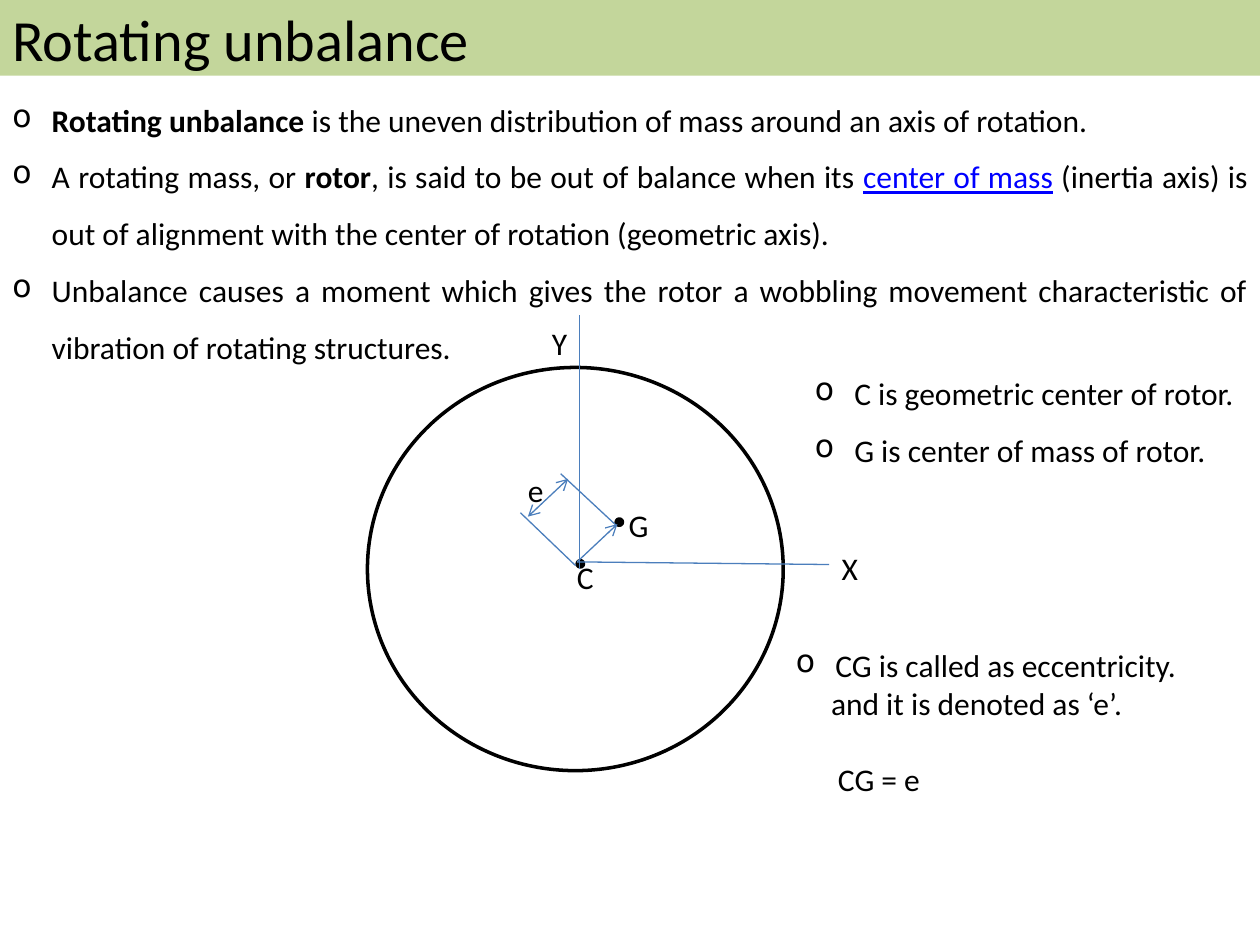
from lxml import etree
from pptx import Presentation
from pptx.dml.color import RGBColor
from pptx.enum import shapes, text
from pptx.oxml.ns import qn
from pptx.util import Pt

COLORS = {"band": "C3D69B", "ink": "000000", "link": "0000FF", "axis": "4B7EBC"}
BODY = {"name": "Calibri", "size": Pt(18)}
TITLE = {"name": "Calibri", "size": Pt(33.3)}
BOLD = {"bold": True}
LINK = {"underline": True}
HANG = 22.5
JUSTIFIED = {"alignment": text.PP_ALIGN.JUSTIFY, "line_spacing": 1.5}
DOT = 3.6


def color(key):
    return RGBColor.from_string(COLORS[key])


def apply_format(target, values):
    for attribute, value in values.items():
        setattr(target, attribute, value)


def add_bullet(paragraph):
    properties = paragraph._p.get_or_add_pPr()
    properties.set("marL", str(Pt(HANG)))
    properties.set("indent", str(-Pt(HANG)))
    etree.SubElement(properties, qn("a:buChar")).set("char", "o")


def indent(paragraph, points):
    paragraph._p.get_or_add_pPr().set("marL", str(Pt(points)))


def write_runs(paragraph, runs, font=BODY):
    for wording, emphasis in runs:
        run = paragraph.add_run()
        run.text = wording
        apply_format(run.font, {**font, **emphasis})
        run.font.color.rgb = color("link" if emphasis is LINK else "ink")


def add_text(slide, box, paragraphs, margins={}):
    frame = slide.shapes.add_textbox(*map(Pt, box)).text_frame
    apply_format(frame, {"word_wrap": True, **margins})
    for number, (runs, layout, left) in enumerate(paragraphs):
        paragraph = frame.add_paragraph() if number else frame.paragraphs[0]
        apply_format(paragraph, layout)
        if left is None:
            add_bullet(paragraph)
        elif left:
            indent(paragraph, left)
        write_runs(paragraph, runs)


def add_label(slide, letter, box, margins={}):
    add_text(slide, box, [([(letter, {})], {}, 0)], margins)


def add_title(slide, wording):
    band = slide.shapes.add_shape(shapes.MSO_SHAPE.RECTANGLE, 0, 0, Pt(720), Pt(43.2))
    band.shadow.inherit = False
    band.fill.solid()
    band.fill.fore_color.rgb = color("band")
    band.line.fill.background()
    frame = band.text_frame
    frame.vertical_anchor = text.MSO_ANCHOR.MIDDLE
    frame.paragraphs[0].alignment = text.PP_ALIGN.LEFT
    write_runs(frame.paragraphs[0], [(wording, {})], TITLE)


def add_circle(slide, box, filled=False):
    circle = slide.shapes.add_shape(shapes.MSO_SHAPE.OVAL, *map(Pt, box))
    circle.shadow.inherit = False
    if filled:
        circle.fill.solid()
        circle.fill.fore_color.rgb = color("ink")
    else:
        circle.fill.background()
    circle.line.color.rgb = color("ink")
    circle.line.width = Pt(2)


def add_line(slide, start, end, arrows=()):
    line = slide.shapes.add_connector(
        shapes.MSO_CONNECTOR.STRAIGHT, *map(Pt, (*start, *end)))
    line.line.color.rgb = color("axis")
    line.line.width = Pt(0.75)
    for arrow in arrows:
        etree.SubElement(line.line._get_or_add_ln(), qn(arrow)).set("type", "arrow")
    etree.SubElement(line._element.spPr, qn("a:effectLst"))


def add_definitions(slide):
    add_text(slide, (0, 43.2, 720, 167), [
        ([("Rotating unbalance", BOLD),
          (" is the uneven distribution of mass around an axis of rotation.", {})],
         JUSTIFIED, None),
        ([("A rotating mass, or ", {}), ("rotor", BOLD),
          (", is said to be out of balance when its ", {}), ("center of mass", LINK),
          (" (inertia axis) is out of alignment with the center of rotation "
           "(geometric axis).", {})], JUSTIFIED, None),
        ([("Unbalance causes a moment which gives the rotor a wobbling movement "
           "characteristic of vibration of rotating structures.", {})], JUSTIFIED, None),
    ])


def add_rotor(slide):
    add_circle(slide, (210, 210, 237.6, 230.4))
    for left, top in ((329.8, 320.4), (352.1, 296.6)):
        add_circle(slide, (left, top, DOT, DOT), filled=True)

    center = (329.8, 321.1)
    add_line(slide, center, (352.8, 299.5), ["a:tailEnd"])
    add_line(slide, center, (473.8, 322.6))
    add_line(slide, (331.2, 325.4), (331.2, 180))
    add_line(slide, (352.1, 300.2), (320.4, 270.7))
    add_line(slide, (329, 323.3), (297.4, 293))
    add_line(slide, (301.7, 295.2), (324.7, 273.6), ["a:headEnd", "a:tailEnd"])

    add_label(slide, "C", (325.4, 315.4, 12.2, 29),
              {"margin_left": Pt(4.3), "margin_right": 0})
    for letter, left, top in (("G", 352.1, 285.8), ("Y", 308.2, 181.4),
                              ("X", 473.8, 310.3), ("e", 294.5, 265.7)):
        add_label(slide, letter, (left, top, 24, 29))


def add_notation(slide):
    add_text(slide, (458.6, 210.2, 256.3, 62), [
        ([("C is geometric center of rotor.", {})], {}, None),
        ([("G is center of mass of rotor.", {})], {"line_spacing": 1.5}, None),
    ])
    add_text(slide, (447.8, 365.8, 256.3, 94.3), [
        ([("CG is called as eccentricity.", {})], {}, None),
        ([("and it is denoted as ‘e’.", {})], {}, 20),
        ([("CG = e", {})], {"space_before": Pt(22)}, 24),
    ])


def main():
    deck = Presentation()
    apply_format(deck, {"slide_width": Pt(720), "slide_height": Pt(540)})
    slide = deck.slides.add_slide(deck.slide_layouts[6])
    add_title(slide, "Rotating unbalance")
    add_definitions(slide)
    add_rotor(slide)
    add_notation(slide)
    deck.save("out.pptx")


if __name__ == "__main__":
    main()
